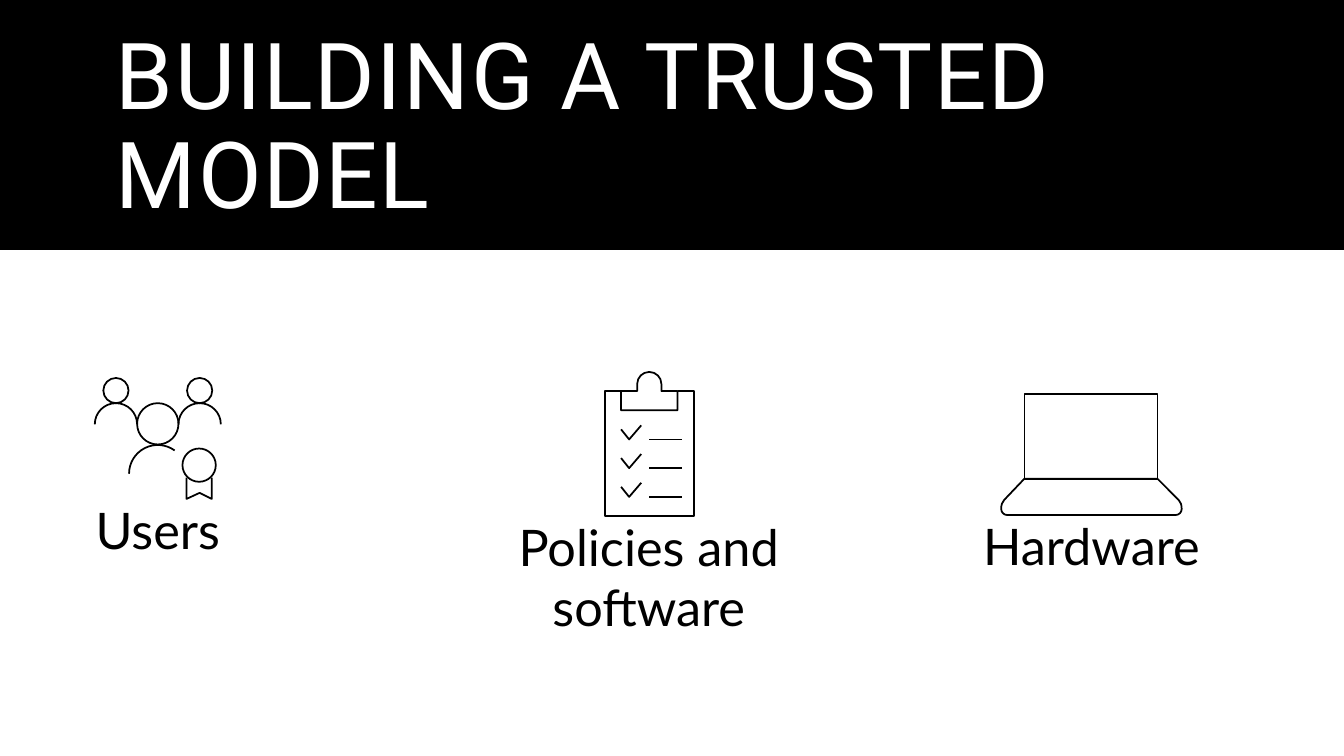
from dataclasses import dataclass
from math import ceil, cos, radians, sin, tan

from pptx import Presentation
from pptx.dml.color import RGBColor
from pptx.enum.shapes import MSO_SHAPE
from pptx.enum.text import MSO_ANCHOR, MSO_AUTO_SIZE, PP_ALIGN
from pptx.oxml.ns import qn
from pptx.util import Inches, Pt

RECTANGLE = MSO_SHAPE.RECTANGLE
TOP, MIDDLE = MSO_ANCHOR.TOP, MSO_ANCHOR.MIDDLE
LEFT, CENTER = PP_ALIGN.LEFT, PP_ALIGN.CENTER
NO_AUTOFIT, GROW = MSO_AUTO_SIZE.NONE, MSO_AUTO_SIZE.SHAPE_TO_FIT_TEXT


@dataclass(frozen=True)
class Theme:
    black: RGBColor = RGBColor(0, 0, 0)
    white: RGBColor = RGBColor(255, 255, 255)
    title_font: str = "Roboto"
    label_font: str = "Lato"
    title_size: float = 66
    label_size: float = 36
    outline: float = 1.25


THEME = Theme()
TITLE = "BUILDING A TRUSTED MODEL"
TITLE_BOX = (1.05, 0.35, 11.23, 1.86)
BAND_BOX = (0, 0, 13.33, 2.48)
LABELS = [
    ("Hardware", (9.26, 5.11, 3.13, 0.61)),
    ("Users", (0, 4.95, 3.13, 0.61)),
    ("Policies and software", (4.87, 5.12, 3.13, 1.45)),
]


def lines(*points):
    return [(point,) for point in points]


def arc(center_x, center_y, radius, start=0, end=360):
    count = ceil(abs(end - start) / 90)
    step = radians(end - start) / count
    handle = 4 / 3 * tan(step / 4)

    def at(angle, pull=0):
        return (center_x + radius * (cos(angle) - pull * sin(angle)),
                center_y + radius * (sin(angle) + pull * cos(angle)))

    angles = [radians(start) + index * step for index in range(count + 1)]
    curves = [(at(first, handle), at(last, -handle), at(last))
              for first, last in zip(angles, angles[1:])]
    return lines(at(angles[0])) + curves


def laptop_icon():
    screen = lines((11.48, 4.75), (10.16, 4.75), (10.16, 3.91), (11.48, 3.91))
    base = lines((10.16, 4.75), (9.96, 4.96))
    base += [((9.94, 4.98), (9.93, 5.01), (9.93, 5.05))]
    base += arc(9.99, 5.05, 0.06, 180, 90)[1:] + arc(11.66, 5.05, 0.06, 90, 0)
    base += [((11.72, 5.01), (11.71, 4.98), (11.69, 4.96))] + lines((11.48, 4.75))
    return [(screen, True), (base, True)]


def users_icon():
    ribbon = lines((1.85, 4.74), (1.85, 4.95), (1.98, 4.89), (2.1, 4.95), (2.1, 4.74))
    outlines = [
        (arc(1.975, 4.615, 0.165), True),
        (ribbon, False),
        (arc(1.565, 4.205, 0.205), True),
        (arc(1.565, 4.7, 0.285, 180, 306), False),
    ]
    for center_x in (1.15, 1.98):
        outlines.append((arc(center_x, 3.875, 0.125), True))
        outlines.append((arc(center_x, 4.21, 0.21, 180, 360), False))
    return outlines


def clipboard_icon():
    clip = arc(6.44, 3.81, 0.12, 180, 360)
    clip += lines((6.56, 3.88), (6.72, 3.88), (6.72, 4.07), (6.16, 4.07), (6.16, 3.88), (6.32, 3.88))
    board = lines((6.16, 3.88), (6, 3.88), (6, 5.12), (6.88, 5.12), (6.88, 3.88), (6.72, 3.88))
    outlines = [(clip, True), (board, False)]
    for row in range(3):
        y = 4.36 + row * 0.285
        outlines.append((lines((6.76, y), (6.44, y)), False))
        outlines.append((lines((6.16, y - 0.1), (6.24, y), (6.36, y - 0.14)), False))
    return outlines


def bend_curves(icon, outlines):
    geometry = next(icon.element.iter(qn("a:path")))
    commands = iter(list(geometry))
    for segments, closed in outlines:
        next(commands)
        for segment in segments[1:]:
            parts = [next(commands) for _ in segment]
            if len(parts) == 3:
                curve = geometry.makeelement(qn("a:cubicBezTo"))
                parts[0].addprevious(curve)
                for part in parts:
                    curve.append(part[0])
                    geometry.remove(part)
        if closed:
            next(commands)


def draw_icon(shapes, outlines):
    builder = None
    for segments, closed in outlines:
        start, *rest = [(Inches(x), Inches(y)) for segment in segments for x, y in segment]
        if builder is None:
            builder = shapes.build_freeform(*start)
        else:
            builder.move_to(*start)
        builder.add_line_segments(rest, close=closed)
    icon = builder.convert_to_shape()
    bend_curves(icon, outlines)
    icon.shadow.inherit = False
    icon.fill.background()
    icon.line.color.rgb = THEME.black
    icon.line.width = Pt(THEME.outline)


def write_text(shape, text, *, font, size, color, align, anchor, fit, margin=0, line_spacing=None, tracking=0):
    frame = shape.text_frame
    frame.word_wrap = True
    frame.auto_size = fit
    frame.vertical_anchor = anchor
    frame.margin_left = frame.margin_right = Inches(margin)
    frame.margin_top = frame.margin_bottom = Inches(margin / 2)
    paragraph = frame.paragraphs[0]
    paragraph.alignment = align
    paragraph.line_spacing = line_spacing
    run = paragraph.add_run()
    run.text = text
    run.font.name = font
    run.font.size = Pt(size)
    run.font.color.rgb = color
    if tracking:
        run._r.get_or_add_rPr().set("spc", str(round(tracking * 100)))


def main():
    presentation = Presentation()
    presentation.slide_width = Inches(13.33)
    presentation.slide_height = Inches(7.5)
    slide = presentation.slides.add_slide(presentation.slide_layouts[5])

    title = slide.shapes.title
    title.left, title.top, title.width, title.height = map(Inches, TITLE_BOX)
    write_text(title, TITLE, font=THEME.title_font, size=THEME.title_size, color=THEME.white,
               align=LEFT, anchor=MIDDLE, fit=NO_AUTOFIT, margin=0.1, line_spacing=0.9, tracking=1.2)

    band = slide.shapes.add_shape(RECTANGLE, *map(Inches, BAND_BOX))
    band.shadow.inherit = False
    band.fill.solid()
    band.fill.fore_color.rgb = THEME.black
    band.line.fill.background()
    title.element.addprevious(band.element)

    icons = (laptop_icon(), users_icon(), clipboard_icon())
    for outlines, (text, box) in zip(icons, LABELS):
        group = slide.shapes.add_group_shape()
        draw_icon(group.shapes, outlines)
        label = group.shapes.add_textbox(*map(Inches, box))
        write_text(label, text, font=THEME.label_font, size=THEME.label_size,
                   color=THEME.black, align=CENTER, anchor=TOP, fit=GROW)

    presentation.save("out.pptx")


if __name__ == "__main__":
    main()
